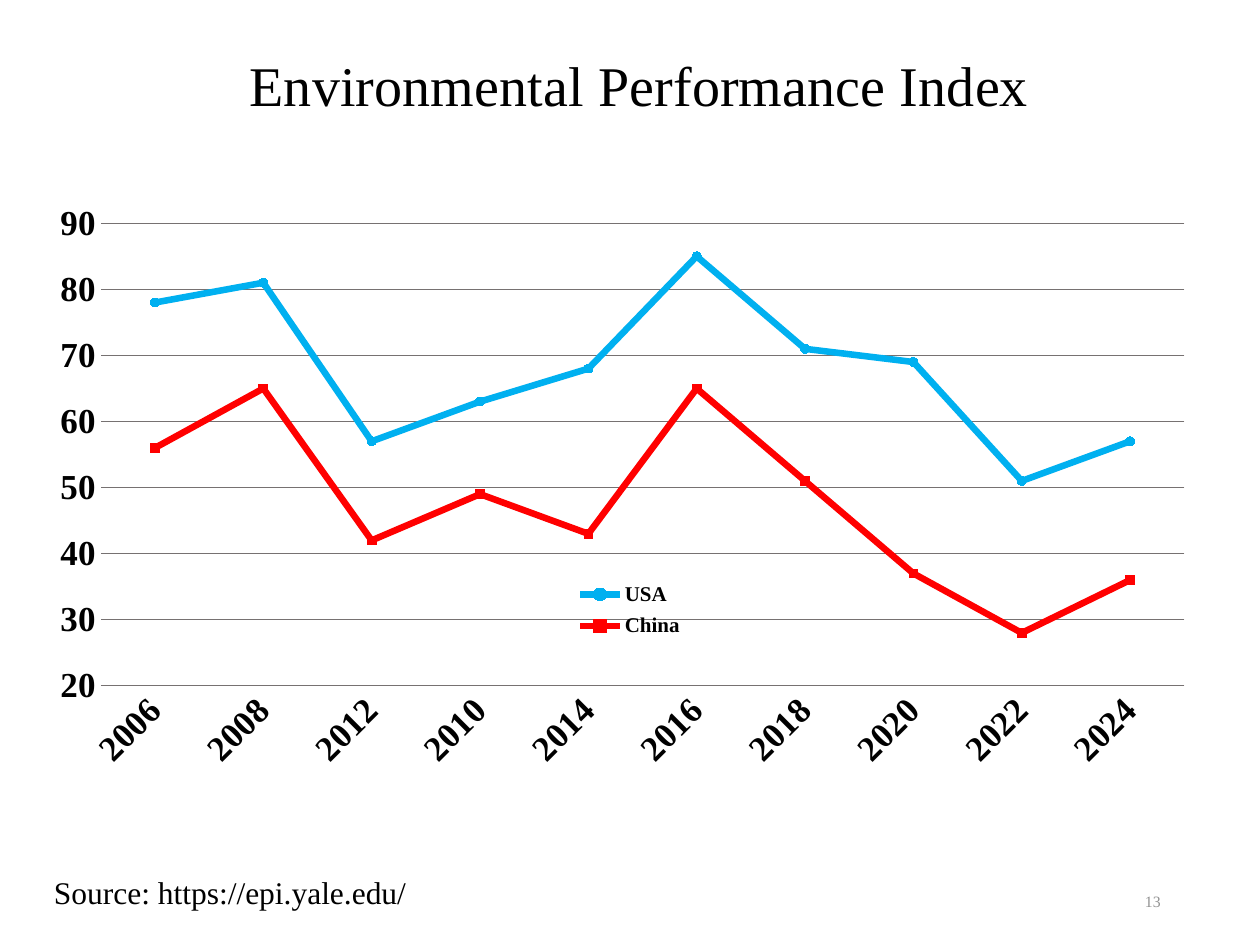
from lxml import etree
from pptx import Presentation
from pptx.chart.data import CategoryChartData
from pptx.dml.color import RGBColor
from pptx.enum.chart import XL_CHART_TYPE, XL_LEGEND_POSITION, XL_MARKER_STYLE, XL_TICK_MARK
from pptx.enum.text import MSO_ANCHOR, PP_ALIGN
from pptx.oxml.ns import qn
from pptx.util import Inches, Pt

LINE_MARKERS = XL_CHART_TYPE.LINE_MARKERS
LEGEND_RIGHT = XL_LEGEND_POSITION.RIGHT
CIRCLE, SQUARE = XL_MARKER_STYLE.CIRCLE, XL_MARKER_STYLE.SQUARE
NO_TICK = XL_TICK_MARK.NONE
LEFT, RIGHT = PP_ALIGN.LEFT, PP_ALIGN.RIGHT
TOP, MIDDLE = MSO_ANCHOR.TOP, MSO_ANCHOR.MIDDLE

WIDTH, HEIGHT = Inches(10), Inches(7.5)
FONT = "Times New Roman"
COLORS = {"text": "000000", "page": "929292", "grid": "767171",
          "USA": "00B0F0", "China": "FF0000"}
YEARS = ["2006", "2008", "2012", "2010", "2014", "2016", "2018", "2020", "2022", "2024"]
SCORES = {
    "USA": [78, 81, 57, 63, 68, 85, 71, 69, 51, 57],
    "China": [56, 65, 42, 49, 43, 65, 51, 37, 28, 36],
}
MARKERS = {"USA": CIRCLE, "China": SQUARE}


def color(key):
    return RGBColor.from_string(COLORS[key])


def style_font(font, size, key="text", bold=False):
    font.name = FONT
    font.size = Pt(size)
    font.bold = bold
    font.color.rgb = color(key)


def style_line(line, key, width):
    line.color.rgb = color(key)
    line.width = Pt(width)


def add_caption(slide, words, box, size, key="text", align=LEFT, anchor=TOP):
    left, top, width, height = box
    frame = slide.shapes.add_textbox(
        int(WIDTH * left), int(HEIGHT * top), int(WIDTH * width), int(HEIGHT * height)
    ).text_frame
    frame.word_wrap = True
    frame.vertical_anchor = anchor
    caption = frame.paragraphs[0]
    caption.text = words
    caption.alignment = align
    style_font(caption.font, size, key)


def place(part, index, inner=False, **shares):
    for old in part.findall(qn("c:layout")):
        part.remove(old)
    layout = etree.Element(qn("c:layout"))
    manual = etree.SubElement(layout, qn("c:manualLayout"))
    settings = {"layoutTarget": "inner"} if inner else {}
    settings |= {"xMode": "edge", "yMode": "edge"} | shares
    for tag, value in settings.items():
        etree.SubElement(manual, qn(f"c:{tag}")).set("val", str(value))
    part.insert(index, layout)


def style_axes(chart):
    years, scores = chart.category_axis, chart.value_axis
    for axis in (years, scores):
        axis.major_tick_mark = axis.minor_tick_mark = NO_TICK
        style_font(axis.tick_labels.font, 20, bold=True)
    style_line(years.format.line, "grid", 0.75)
    years._element.find(qn("c:txPr")).find(qn("a:bodyPr")).set("rot", "-2700000")
    scores.minimum_scale, scores.maximum_scale, scores.major_unit = 20, 90, 10
    scores.format.line.fill.background()
    style_line(scores.major_gridlines.format.line, "grid", 0.75)


def style_series(country):
    country.smooth = False
    style_line(country.format.line, country.name, 3.75)
    marker = country.marker
    marker.style, marker.size = MARKERS[country.name], 5
    marker.format.fill.solid()
    marker.format.fill.fore_color.rgb = color(country.name)
    style_line(marker.format.line, country.name, 0.75)


def add_index_chart(slide):
    data = CategoryChartData()
    data.categories = YEARS
    for country, scores in SCORES.items():
        data.add_series(country, scores)
    chart = slide.shapes.add_chart(
        LINE_MARKERS, 0, 0, WIDTH, Inches(6.33), data).chart
    style_font(chart.font, 10)
    chart.plots[0].vary_by_categories = False
    style_axes(chart)
    for country in chart.plots[0].series:
        style_series(country)

    chart.has_title = True
    heading = chart.chart_title.text_frame.paragraphs[0]
    heading.text = "Environmental Performance Index"
    style_font(heading.font, 32)
    place(chart.chart_title._element, 1, x=0.19, y=0.05)

    chart.has_legend = True
    chart.legend.position = LEGEND_RIGHT
    chart.legend.include_in_layout = False
    style_font(chart.legend.font, 12, bold=True)
    place(chart.legend._element, 1, x=0.45, y=0.72, w=0.1, h=0.09)
    plot_area = chart._chartSpace.chart.plotArea
    place(plot_area, 0, inner=True, x=0.08, y=0.28, w=0.86, h=0.58)


def main():
    deck = Presentation()
    deck.slide_width, deck.slide_height = WIDTH, HEIGHT
    slide = deck.slides.add_slide(deck.slide_layouts[6])
    add_caption(slide, "Source: https://epi.yale.edu/", (0.033, 0.917, 0.85, 0.053), 18)
    add_caption(slide, "13", (0.706, 0.927, 0.225, 0.053), 9, "page", RIGHT, MIDDLE)
    add_index_chart(slide)
    deck.save("out.pptx")


if __name__ == "__main__":
    main()
